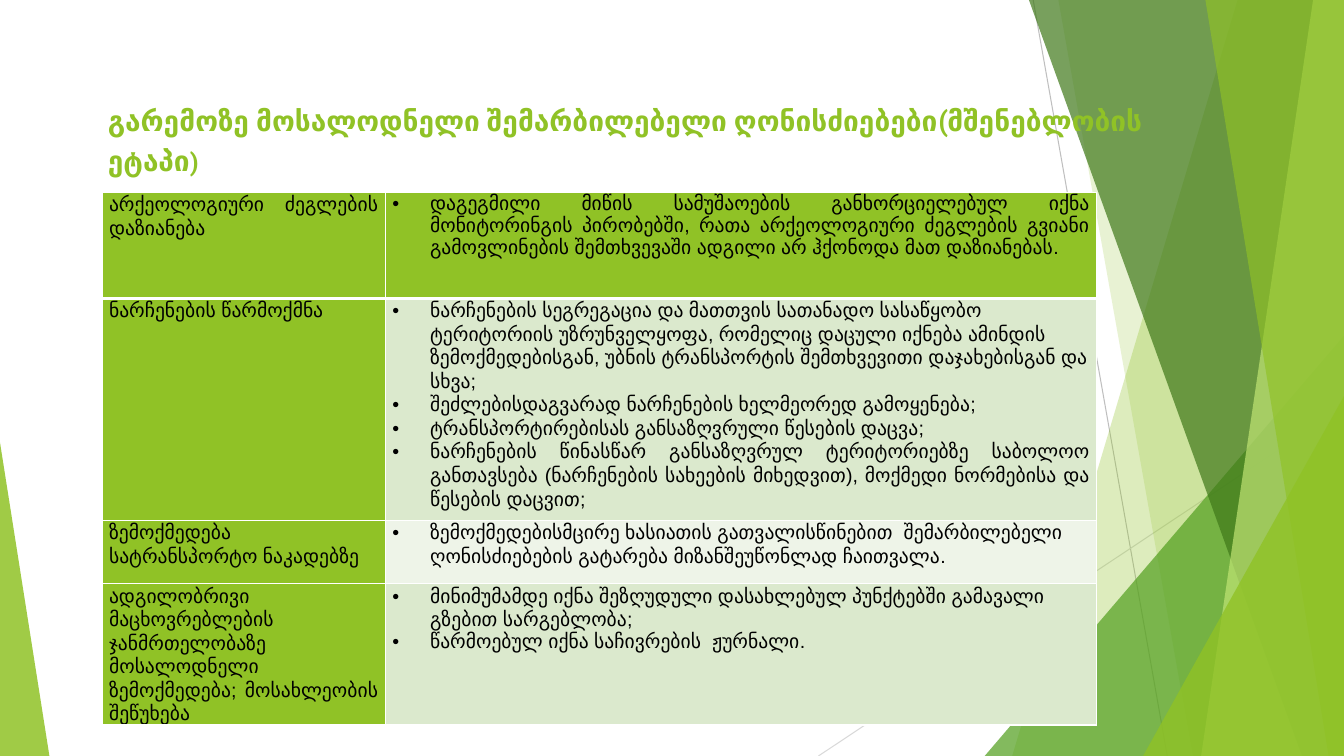
from dataclasses import dataclass

from lxml import etree
from pptx import Presentation
from pptx.dml.color import RGBColor
from pptx.enum import shapes, text
from pptx.oxml import ns
from pptx.util import Pt

WIDE, HIGH = 960, 540
WHITE = RGBColor(0xFF, 0xFF, 0xFF)
BLACK = RGBColor(0, 0, 0)
GREEN = RGBColor(0x90, 0xC2, 0x26)
LEAF = RGBColor(0x54, 0xA0, 0x21)
DARK = RGBColor(0x3F, 0x78, 0x19)
LIME = RGBColor(0xC0, 0xE4, 0x74)
PALE = RGBColor(0xDB, 0xE9, 0xCD)
MIST = RGBColor(0xEE, 0xF4, 0xE8)
GREY = RGBColor(0xBF, 0xBF, 0xBF)
SILVER = RGBColor(0xD9, 0xD9, 0xD9)
LEFT, JUST = text.PP_ALIGN.LEFT, text.PP_ALIGN.JUSTIFY
INDENT = 27


@dataclass
class Ray:
    start: tuple[float, float]
    end: tuple[float, float]
    color: RGBColor


@dataclass
class Wedge:
    """Area from a slanted left edge to the right side of the slide."""
    top: float
    foot: float
    color: RGBColor
    alpha: int


@dataclass
class Peak:
    """Triangle standing on the bottom of the slide."""
    left: float
    top: float
    width: float
    apex: float
    color: RGBColor
    alpha: int


@dataclass
class Para:
    words: str
    align: text.PP_ALIGN = JUST
    space: float | None = 1.07
    bullet: bool = True


@dataclass
class Row:
    high: float
    topic: str
    steps: list[Para]
    fill: RGBColor


RAYS = [
    Ray((738, 0), (833.8, HIGH), GREY),
    Ray((WIDE, 290.2), (584.6, HIGH), SILVER),
]
FACETS = [
    Wedge(884.2, 722.9, GREEN, 30),
    Wedge(756, 851.8, GREEN, 20),
    Peak(703.4, 239.8, 256.6, 1, LEAF, 72),
    Wedge(735.1, 929.5, DARK, 70),
    Wedge(938.2, 858.2, LIME, 70),
    Wedge(861.1, 949, GREEN, 65),
    Peak(816.5, 283, 143.5, 1, GREEN, 80),
    Peak(0, 316.1, 35.3, 0, GREEN, 85),
]
TITLE = [
    ("გარემოზე მოსალოდნელი შემარბილებელი ღონისძიებები(მშენებლობის ეტაპი", 20),
    (")", 18),
    (" ", 24),
]
COLS = [202.3, 508.3]
ROWS = [
    Row(75.6, "არქეოლოგიური ძეგლების დაზიანება", [
        Para("დაგეგმილი მიწის სამუშაოების განხორციელებულ იქნა მონიტორინგის "
             "პირობებში, რათა არქეოლოგიური ძეგლების გვიანი გამოვლინების "
             "შემთხვევაში ადგილი არ ჰქონოდა მათ დაზიანებას. ", space=None),
    ], GREEN),
    Row(158.4, "ნარჩენების წარმოქმნა", [
        Para("ნარჩენების სეგრეგაცია და მათთვის სათანადო სასაწყობო ტერიტორიის "
             "უზრუნველყოფა, რომელიც დაცული იქნება ამინდის ზემოქმედებისგან, "
             "უბნის ტრანსპორტის შემთხვევითი დაჯახებისგან და სხვა;", LEFT),
        Para("შეძლებისდაგვარად ნარჩენების ხელმეორედ გამოყენება;"),
        Para("ტრანსპორტირებისას განსაზღვრული წესების დაცვა; "),
        Para("ნარჩენების წინასწარ განსაზღვრულ ტერიტორიებზე საბოლოო განთავსება "
             "(ნარჩენების სახეების მიხედვით), მოქმედი ნორმებისა და წესების დაცვით;"),
    ], PALE),
    Row(45.4, "ზემოქმედება სატრანსპორტო ნაკადებზე", [
        Para("ზემოქმედებისმცირე ხასიათის გათვალისწინებით  შემარბილებელი "
             "ღონისძიებების გატარება მიზანშეუწონლად ჩაითვალა.", LEFT),
    ], MIST),
    Row(67.7, "ადგილობრივი მაცხოვრებლების ჯანმრთელობაზე მოსალოდნელი "
              "ზემოქმედება; მოსახლეობის შეწუხება", [
        Para("მინიმუმამდე იქნა შეზღუდული დასახლებულ პუნქტებში გამავალი "
             "გზებით სარგებლობა;", LEFT),
        Para("წარმოებულ იქნა საჩივრების  ჟურნალი.", space=None),
    ], PALE),
]


def add(parent, tag: str, **attrs):
    return etree.SubElement(parent, ns.qn(tag), attrs)


def draw_ray(slide, ray: Ray) -> None:
    line = slide.shapes.add_connector(
        shapes.MSO_CONNECTOR.STRAIGHT, *map(Pt, ray.start + ray.end))
    line.line.color.rgb = ray.color
    line.line.width = Pt(0.75)
    add(line.element.spPr, "a:effectLst")


def draw_facet(slide, facet: Wedge | Peak) -> None:
    if isinstance(facet, Wedge):
        pen = slide.shapes.build_freeform(facet.top, 0, scale=Pt(1))
        pen.add_line_segments([(WIDE, 0), (WIDE, HIGH), (facet.foot, HIGH)])
        shape = pen.convert_to_shape()
    else:
        shape = slide.shapes.add_shape(
            shapes.MSO_SHAPE.ISOSCELES_TRIANGLE, Pt(facet.left), Pt(facet.top),
            Pt(facet.width), Pt(HIGH - facet.top))
        shape.adjustments[0] = facet.apex
    shape.shadow.inherit = False
    shape.line.fill.background()
    shape.fill.solid()
    shape.fill.fore_color.rgb = facet.color
    for color in shape.element.spPr.iter(ns.qn("a:srgbClr")):
        add(color, "a:alpha", val=str(facet.alpha * 1000))


def set_title(slide) -> None:
    title = slide.shapes.title
    title.left, title.top, title.width, title.height = map(
        Pt, (69.8, 70.6, 788.4, 39.6))
    frame = title.text_frame
    frame.word_wrap = True
    frame.auto_size = text.MSO_AUTO_SIZE.NONE
    frame.vertical_anchor = text.MSO_ANCHOR.TOP
    para = frame.paragraphs[0]
    para.alignment = LEFT
    for words, size in TITLE:
        run = para.add_run()
        run.text = words
        run.font.size = Pt(size)
        run.font.name = "Roboto"
        run.font.bold = True
        run.font.color.rgb = GREEN
    # The title stands in front of the facets.
    title.element.getparent().append(title.element)


def set_edges(cell, top: int, foot: int) -> None:
    props = cell._tc.get_or_add_tcPr()
    sides = [("L", 1), ("R", 1), ("T", top), ("B", foot)]
    for spot, (side, width) in enumerate(sides):
        edge = etree.Element(ns.qn(f"a:ln{side}"), w=str(Pt(width)))
        add(add(edge, "a:solidFill"), "a:srgbClr", val=str(WHITE))
        props.insert(spot, edge)


def fill_cell(cell, paras: list[Para], color: RGBColor) -> None:
    cell.fill.solid()
    cell.fill.fore_color.rgb = color
    cell.margin_left = cell.margin_right = Pt(5.04)
    cell.margin_top = cell.margin_bottom = 0
    frame = cell.text_frame
    for spot, item in enumerate(paras):
        para = frame.add_paragraph() if spot else frame.paragraphs[0]
        para.alignment = item.align
        if item.space:
            para.line_spacing = item.space
        run = para.add_run()
        run.text = item.words
        run.font.size = Pt(14)
        run.font.name = "Arial"
        run.font.bold = False
        run.font.color.rgb = BLACK
        props = para._p.get_or_add_pPr()
        if item.bullet:
            props.set("marL", str(Pt(INDENT)))
            props.set("indent", str(-Pt(INDENT)))
            add(props, "a:buFont", typeface="Arial")
            add(props, "a:buChar", char="•")
        add(add(props, "a:tabLst"), "a:tab", pos=str(Pt(INDENT)), algn="l")


def draw_table(slide) -> None:
    high = sum(row.high for row in ROWS)
    table = slide.shapes.add_table(
        len(ROWS), len(COLS), Pt(72.9), Pt(137.6), Pt(sum(COLS)), Pt(high)).table
    table.first_row = table.horz_banding = False
    for col, width in zip(table.columns, COLS):
        col.width = Pt(width)
    for spot, row in enumerate(ROWS):
        table.rows[spot].height = Pt(row.high)
        topic, steps = table.rows[spot].cells
        fill_cell(topic, [Para(row.topic, bullet=False)], GREEN)
        fill_cell(steps, row.steps, row.fill)
        for cell in (topic, steps):
            set_edges(cell, 3 if spot == 1 else 1, 3 if spot == 0 else 1)


def main() -> None:
    deck = Presentation()
    deck.slide_width, deck.slide_height = Pt(WIDE), Pt(HIGH)
    slide = deck.slides.add_slide(deck.slide_layouts[5])
    for ray in RAYS:
        draw_ray(slide, ray)
    for facet in FACETS:
        draw_facet(slide, facet)
    set_title(slide)
    draw_table(slide)
    deck.save("out.pptx")


if __name__ == "__main__":
    main()
